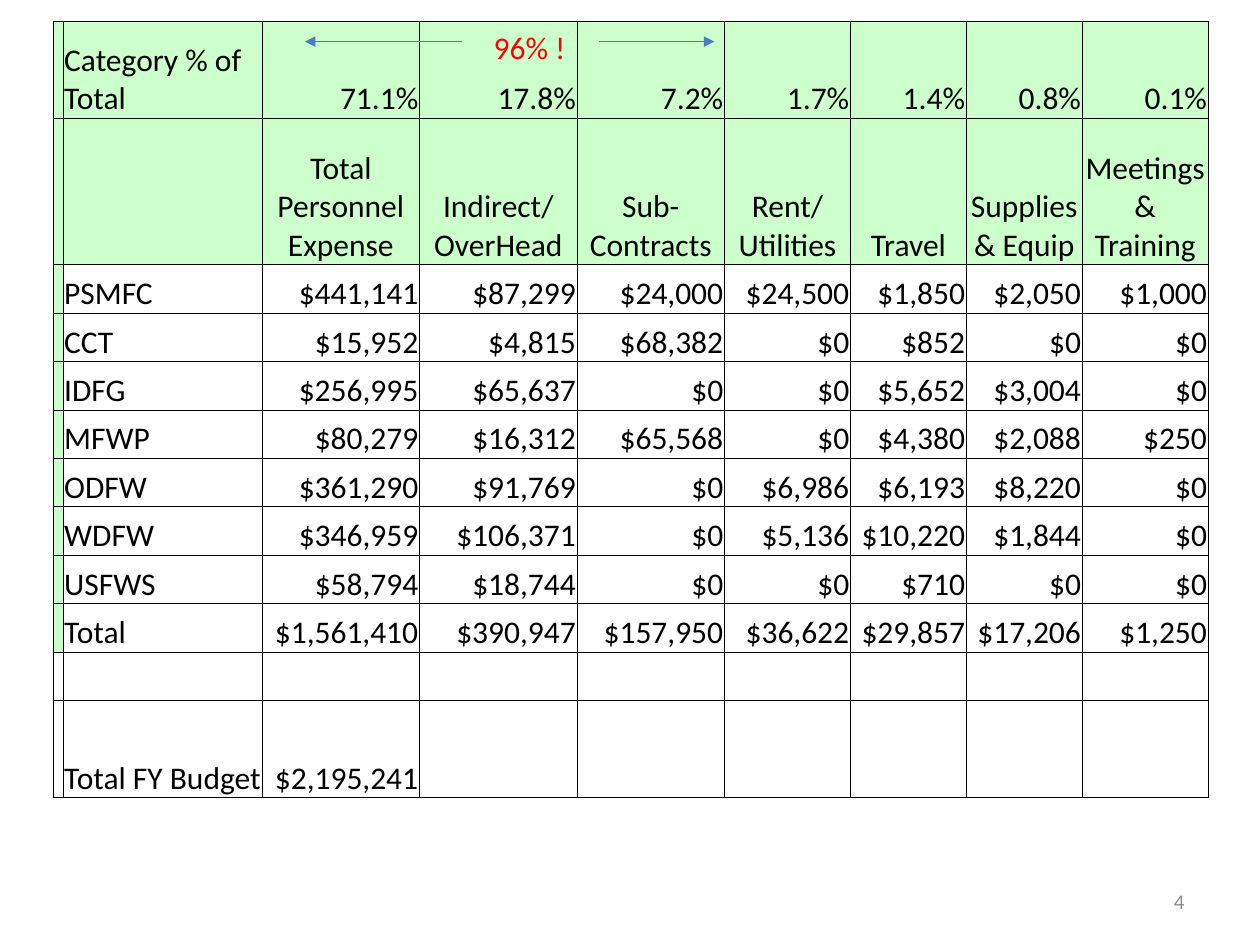
from dataclasses import dataclass

import pptx
import pptx.dml.color
import pptx.enum.shapes
import pptx.enum.text
import pptx.oxml
import pptx.oxml.ns
import pptx.util

Inches = pptx.util.Inches
Pt = pptx.util.Pt
ALIGN = pptx.enum.text.PP_ALIGN
ANCHOR = pptx.enum.text.MSO_ANCHOR

GREEN, BLACK, RED, BLUE, GRAY = "CCFFCC", "000000", "FF0000", "4B7EBC", "8C8C8C"
DRAWING_NS = pptx.oxml.ns.nsdecls("a")

COLUMN_WIDTHS = [0.08, 1.58, 1.25, 1.25, 1.17, 1, 0.92, 0.92, 1]
TALL_ROW, HEADING_ROW = 0.77, 1.16
LINE_ROW = TALL_ROW / 2
HEADING_INDEX = 1
LAST_GREEN_STRIP = 9

BUDGET = [
    ["Category % of Total", "71.1%", "17.8%", "7.2%", "1.7%", "1.4%", "0.8%", "0.1%"],
    ["", "Total Personnel Expense", "Indirect/\nOverHead", "Sub-Contracts",
     "Rent/\nUtilities", "Travel", "Supplies & Equip", "Meetings & Training"],
    ["PSMFC", "$441,141", "$87,299", "$24,000", "$24,500", "$1,850", "$2,050", "$1,000"],
    ["CCT", "$15,952", "$4,815", "$68,382", "$0", "$852", "$0", "$0"],
    ["IDFG", "$256,995", "$65,637", "$0", "$0", "$5,652", "$3,004", "$0"],
    ["MFWP", "$80,279", "$16,312", "$65,568", "$0", "$4,380", "$2,088", "$250"],
    ["ODFW", "$361,290", "$91,769", "$0", "$6,986", "$6,193", "$8,220", "$0"],
    ["WDFW", "$346,959", "$106,371", "$0", "$5,136", "$10,220", "$1,844", "$0"],
    ["USFWS", "$58,794", "$18,744", "$0", "$0", "$710", "$0", "$0"],
    ["Total", "$1,561,410", "$390,947", "$157,950", "$36,622", "$29,857", "$17,206", "$1,250"],
    [""] * 8,
    ["Total FY Budget", "$2,195,241"] + [""] * 6,
]
ROW_HEIGHTS = [TALL_ROW, HEADING_ROW] + [LINE_ROW] * (len(BUDGET) - 3) + [TALL_ROW]


@dataclass
class Arrow:
    start: float
    end: float
    y: float = 0.33


@dataclass
class Label:
    text: str
    left: float
    top: float
    width: float
    height: float
    size: float
    color: str
    align: ALIGN = ALIGN.LEFT
    anchor: ANCHOR = ANCHOR.TOP
    wrap: bool = True


ARROWS = [Arrow(3.67, 2.42), Arrow(4.75, 5.67)]
LABELS = [
    Label("96% !", 3.82, 0.17, 0.78, 0.71, 18, RED, wrap=False),
    Label("4", 7.17, 6.95, 2.33, 0.4, 12, GRAY, ALIGN.RIGHT, ANCHOR.MIDDLE),
]


def rgb(value: str) -> pptx.dml.color.RGBColor:
    return pptx.dml.color.RGBColor.from_string(value)


def write_text(frame, text: str, *, size: float = 18, color: str = BLACK,
               align: ALIGN = ALIGN.LEFT) -> None:
    frame.text = text
    for paragraph in frame.paragraphs:
        paragraph.alignment = align
        paragraph.font.name = "Calibri"
        paragraph.font.size = Pt(size)
        paragraph.font.color.rgb = rgb(color)


def add_borders(cell) -> None:
    properties = cell._tc.get_or_add_tcPr()
    for position, side in enumerate(("lnL", "lnR", "lnT", "lnB")):
        border = pptx.oxml.parse_xml(
            f'<a:{side} {DRAWING_NS} w="{Pt(0.5)}"><a:solidFill>'
            f'<a:srgbClr val="{BLACK}"/></a:solidFill></a:{side}>')
        properties.insert(position, border)


def cell_align(row: int, column: int) -> ALIGN:
    if column <= 1:
        return ALIGN.LEFT
    return ALIGN.CENTER if row == HEADING_INDEX else ALIGN.RIGHT


def add_budget_table(slide) -> None:
    table = slide.shapes.add_table(
        len(ROW_HEIGHTS), len(COLUMN_WIDTHS), Inches(0.42), Inches(0.17),
        Inches(sum(COLUMN_WIDTHS)), Inches(sum(ROW_HEIGHTS))).table
    table.first_row = table.horz_banding = False
    for column, width in zip(table.columns, COLUMN_WIDTHS):
        column.width = Inches(width)
    for row, height in zip(table.rows, ROW_HEIGHTS):
        row.height = Inches(height)

    for r, values in enumerate(BUDGET):
        for c, text in enumerate(["", *values]):
            cell = table.cell(r, c)
            cell.margin_left = cell.margin_right = cell.margin_top = Inches(0.01)
            cell.margin_bottom = 0
            cell.vertical_anchor = ANCHOR.BOTTOM
            write_text(cell.text_frame, text, align=cell_align(r, c))
            if r <= HEADING_INDEX or (c == 0 and r <= LAST_GREEN_STRIP):
                cell.fill.solid()
                cell.fill.fore_color.rgb = rgb(GREEN)
            else:
                cell.fill.background()
            add_borders(cell)


def add_arrow(slide, arrow: Arrow) -> None:
    connector = slide.shapes.add_connector(
        pptx.enum.shapes.MSO_CONNECTOR.STRAIGHT,
        Inches(arrow.start), Inches(arrow.y), Inches(arrow.end), Inches(arrow.y))
    connector.line.color.rgb = rgb(BLUE)
    connector.line.width = Pt(0.75)
    connector.line._get_or_add_ln().append(
        pptx.oxml.parse_xml(f'<a:tailEnd {DRAWING_NS} type="triangle"/>'))
    connector._element.spPr.append(pptx.oxml.parse_xml(f"<a:effectLst {DRAWING_NS}/>"))


def add_label(slide, label: Label) -> None:
    frame = slide.shapes.add_textbox(
        Inches(label.left), Inches(label.top),
        Inches(label.width), Inches(label.height)).text_frame
    frame.word_wrap = label.wrap
    frame.vertical_anchor = label.anchor
    write_text(frame, label.text, size=label.size, color=label.color, align=label.align)


def main() -> None:
    presentation = pptx.Presentation()
    presentation.slide_width = Inches(10)
    presentation.slide_height = Inches(7.5)
    slide = presentation.slides.add_slide(presentation.slide_layouts[6])
    add_budget_table(slide)
    for arrow in ARROWS:
        add_arrow(slide, arrow)
    for label in LABELS:
        add_label(slide, label)
    presentation.save("out.pptx")


if __name__ == "__main__":
    main()
